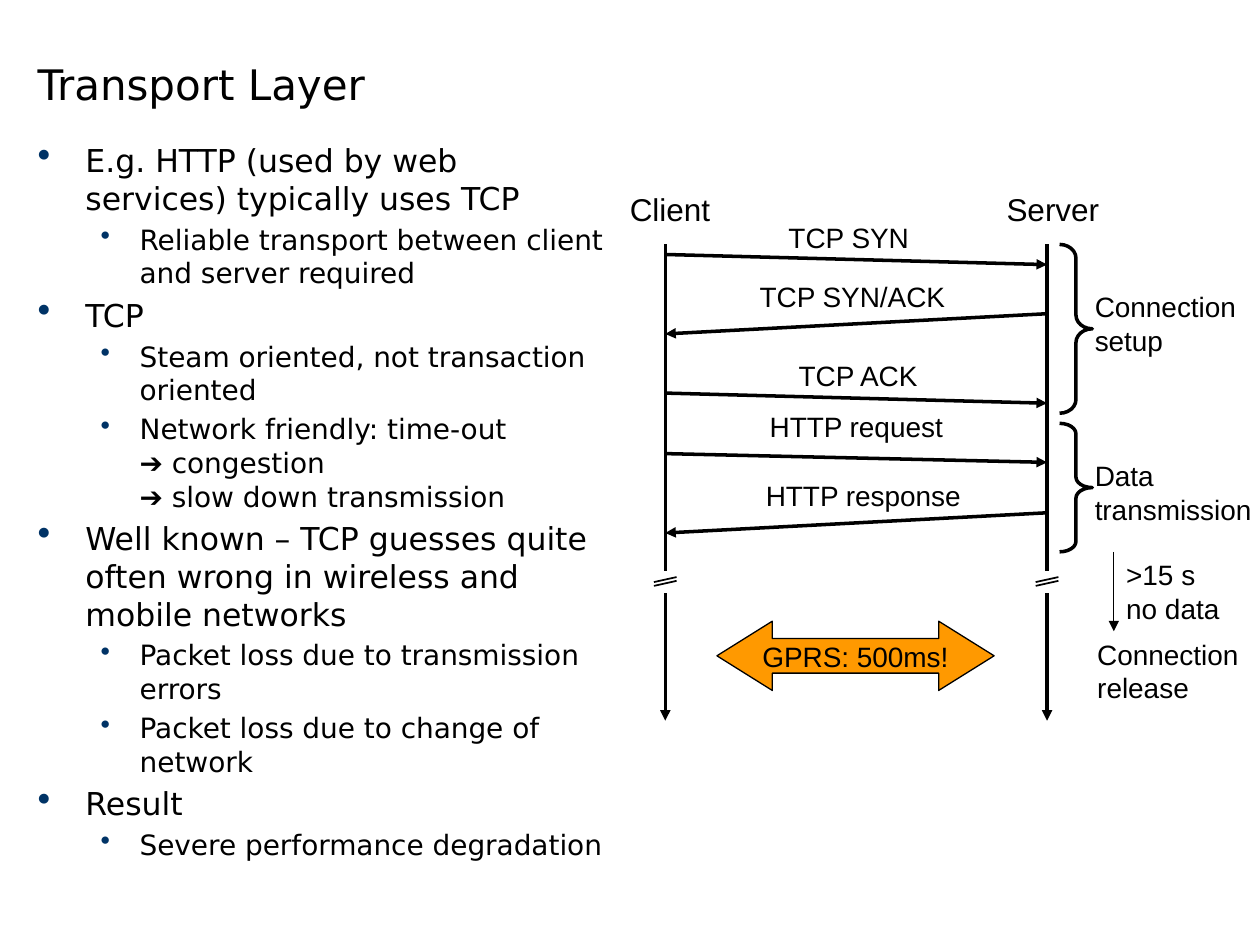
from copy import deepcopy
from dataclasses import dataclass

from lxml.etree import SubElement
from pptx import Presentation
from pptx.dml.color import RGBColor
from pptx.enum.shapes import MSO_CONNECTOR, MSO_SHAPE
from pptx.enum.text import MSO_ANCHOR, MSO_AUTO_SIZE, PP_ALIGN
from pptx.oxml.ns import qn
from pptx.util import Inches, Pt

BLACK = RGBColor(0x00, 0x00, 0x00)
WHITE = RGBColor(0xFF, 0xFF, 0xFF)
NAVY = RGBColor(0x00, 0x33, 0x66)
ORANGE = RGBColor(0xFF, 0x99, 0x00)
SANS = "DejaVu Sans"
ARIAL = "Arial"
CLIENT = 5.28
SERVER = 8.31


@dataclass
class Level:
    size: int
    left: float
    hang: float
    scale: int


@dataclass
class Label:
    text: str
    left: float
    top: float
    width: float
    height: float = 0.37
    size: int = 16


@dataclass
class Message:
    start: float
    end: float
    reply: bool = False


@dataclass
class Brace:
    top: float
    height: float
    bend: float


LEVELS = [Level(18, 0.38, 0.38, 120), Level(16, 0.81, 0.31, 100)]

POINTS = [
    (0, "E.g. HTTP (used by web services) typically uses TCP"),
    (1, "Reliable transport between client and server required"),
    (0, "TCP"),
    (1, "Steam oriented, not transaction oriented"),
    (1, "Network friendly: time-out\v➔ congestion\v➔ slow down transmission"),
    (0, "Well known – TCP guesses quite often wrong in wireless and mobile networks"),
    (1, "Packet loss due to transmission errors"),
    (1, "Packet loss due to change of network"),
    (0, "Result"),
    (1, "Severe performance degradation"),
]

LABELS = [
    Label("Client", 4.9, 1.46, 0.84, 0.4, 18),
    Label("Server", 7.89, 1.46, 0.94, 0.4, 18),
    Label("Connection\nsetup", 8.59, 2.25, 1.32, 0.64),
    Label("Data\ntransmission", 8.59, 3.59, 1.45, 0.64),
    Label("Connection\nrelease", 8.61, 5.01, 1.32, 0.64),
    Label("TCP SYN", 6.16, 1.7, 1.16),
    Label("TCP SYN/ACK", 5.93, 2.17, 1.68),
    Label("TCP ACK", 6.24, 2.8, 1.16),
    Label("HTTP request", 6.01, 3.2, 1.58),
    Label("HTTP response", 5.98, 3.75, 1.76),
    Label(">15 s\nno data", 8.84, 4.38, 0.94, 0.64),
]

MESSAGES = [
    Message(2.02, 2.1),
    Message(2.49, 2.65, True),
    Message(3.12, 3.2),
    Message(3.6, 3.67),
    Message(4.07, 4.23, True),
]

BRACES = [Brace(1.94, 1.34, 0.42), Brace(3.36, 1.02, 0.32)]


def apply(target, values: dict) -> None:
    for name, value in values.items():
        setattr(target, name, value)


def style(para, size: int, face: str) -> None:
    for run in para.runs:
        apply(run.font, {"size": Pt(size), "name": face})
        run.font.color.rgb = BLACK
    for gap in para._p.findall(qn("a:br")):
        gap.insert(0, deepcopy(para.runs[0]._r.rPr))


def add_box(slide, left: float, top: float, width: float, height: float, **values):
    box = slide.shapes.add_textbox(
        Inches(left), Inches(top), Inches(width), Inches(height))
    apply(box.text_frame, values)
    return box.text_frame


def add_label(slide, label: Label) -> None:
    frame = add_box(slide, label.left, label.top, label.width, label.height,
                    word_wrap=False, auto_size=MSO_AUTO_SIZE.SHAPE_TO_FIT_TEXT)
    frame.text = label.text
    for para in frame.paragraphs:
        style(para, label.size, ARIAL)


def add_point(para, depth: int, text: str, first: bool) -> None:
    level = LEVELS[depth]
    para.text = text
    apply(para, {"level": depth, "space_before": Pt(0 if first else level.size * 0.2)})
    props = para._p.get_or_add_pPr()
    props.set("marL", str(Inches(level.left)))
    props.set("indent", str(-Inches(level.hang)))
    tint = SubElement(props, qn("a:buClr"))
    SubElement(tint, qn("a:srgbClr"), val=str(NAVY))
    SubElement(props, qn("a:buSzPct"), val=str(level.scale * 1000))
    SubElement(props, qn("a:buChar"), char="•")
    style(para, level.size, SANS)


def add_line(slide, x1: float, y1: float, x2: float, y2: float,
             weight: float, arrow: bool = True) -> None:
    line = slide.shapes.add_connector(
        MSO_CONNECTOR.STRAIGHT, Inches(x1), Inches(y1), Inches(x2), Inches(y2))
    line.line.width = Pt(weight)
    line.line.color.rgb = BLACK
    if arrow:
        SubElement(line.line._get_or_add_ln(), qn("a:tailEnd"), type="triangle")
    SubElement(line._element.spPr, qn("a:effectLst"))


def add_form(slide, kind, left: float, top: float, width: float, height: float,
             fill, color: RGBColor, weight: float, bends=()):
    form = slide.shapes.add_shape(
        kind, Inches(left), Inches(top), Inches(width), Inches(height))
    form.shadow.inherit = False
    if fill is None:
        form.fill.background()
    else:
        form.fill.solid()
        form.fill.fore_color.rgb = fill
    form.line.color.rgb = color
    form.line.width = Pt(weight)
    for spot, bend in enumerate(bends):
        form.adjustments[spot] = bend
    return form


def add_break(slide, axis: float) -> None:
    add_form(slide, MSO_SHAPE.RECTANGLE, axis - 0.18, 4.54, 0.36, 0.16, WHITE, WHITE, 1)
    for low in (4.62, 4.65):
        add_line(slide, axis - 0.09, low, axis + 0.09, low - 0.04, 1, False)


def main() -> None:
    deck = Presentation()
    apply(deck, {"slide_width": Inches(10), "slide_height": Inches(7.5)})
    slide = deck.slides.add_slide(deck.slide_layouts[6])

    title = add_box(slide, 0.2, 0, 6.61, 0.91,
                    word_wrap=True, vertical_anchor=MSO_ANCHOR.BOTTOM)
    title.text = "Transport Layer"
    style(title.paragraphs[0], 24, SANS)

    body = add_box(slide, 0.2, 1.07, 4.71, 5.85, word_wrap=True)
    for spot, (depth, text) in enumerate(POINTS):
        para = body.add_paragraph() if spot else body.paragraphs[0]
        add_point(para, depth, text, spot == 0)

    for brace in BRACES:
        add_form(slide, MSO_SHAPE.RIGHT_BRACE, 8.41, brace.top, 0.26, brace.height,
                 None, BLACK, 2, (brace.bend, 0.5))
    for axis in (CLIENT, SERVER):
        add_line(slide, axis, 1.94, axis, 5.72, 2)
        add_break(slide, axis)
    for item in MESSAGES:
        ends = (SERVER, CLIENT) if item.reply else (CLIENT, SERVER)
        add_line(slide, ends[0], item.start, ends[1], item.end, 2)
    add_line(slide, 8.84, 4.38, 8.84, 5.01, 0.75)
    for label in LABELS:
        add_label(slide, label)

    delay = add_form(slide, MSO_SHAPE.LEFT_RIGHT_ARROW, 5.69, 4.93, 2.2, 0.55,
                     ORANGE, BLACK, 0.75, (0.5, 0.8))
    frame = delay.text_frame
    frame.text = "GPRS: 500ms!"
    apply(frame, {"word_wrap": False, "vertical_anchor": MSO_ANCHOR.MIDDLE})
    frame.paragraphs[0].alignment = PP_ALIGN.CENTER
    style(frame.paragraphs[0], 16, ARIAL)

    deck.save("out.pptx")


if __name__ == "__main__":
    main()
